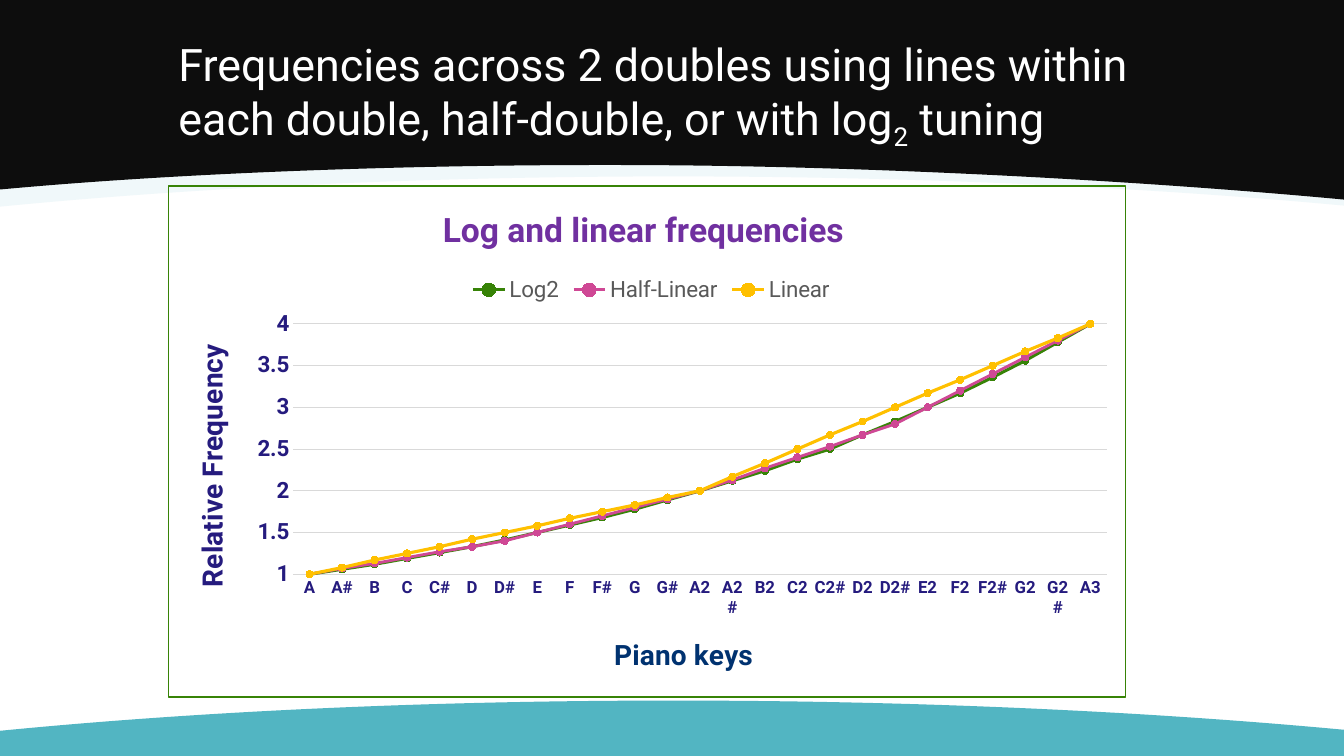
"""Build a slide comparing logarithmic and linear piano tunings in a line chart."""
from dataclasses import dataclass

from lxml.etree import SubElement
from pptx import Presentation
from pptx.chart.data import CategoryChartData
from pptx.dml.color import RGBColor
from pptx.enum.chart import XL_CHART_TYPE, XL_LEGEND_POSITION, XL_MARKER_STYLE, XL_TICK_MARK
from pptx.enum.text import MSO_ANCHOR, MSO_AUTO_SIZE, PP_ALIGN
from pptx.oxml import parse_xml
from pptx.oxml.ns import nsdecls, qn
from pptx.util import Inches, Pt


@dataclass(frozen=True)
class Theme:
    """Colours, font and type sizes of the slide."""
    font: str = "Roboto"
    white: str = "FFFFFF"
    black: str = "0D0D0D"
    mist: str = "EAF6F8"
    teal: str = "52B5C2"
    grid: str = "D9D9D9"
    legend: str = "595959"
    purple: str = "7030A0"
    indigo: str = "251B7E"
    navy: str = "003270"
    green: str = "378307"
    lime: str = "49AF0A"
    pink: str = "CF4895"
    amber: str = "FFC000"
    heading: int = 32
    chart_title: int = 24
    axis_title: int = 20
    label: int = 16
    key_label: int = 12


THEME = Theme()
HEADING = [
    ("Frequencies across 2 doubles using lines within each double, half-double, or with log", 0),
    ("2", -25000),
    (" tuning", 0),
]
CHART_TITLE = "Log and linear frequencies"
KEYS_TITLE = "Piano keys"
FREQUENCY_TITLE = "Relative Frequency"
NOTES = ["A", "A#", "B", "C", "C#", "D", "D#", "E", "F", "F#", "G", "G#"]
KEYS = NOTES + [f"{note[0]}2{note[1:]}" for note in NOTES] + ["A3"]
SERIES = [
    ("Log2", THEME.green, THEME.lime, 2.25,
     [1, 1.06, 1.12, 1.19, 1.26, 1.33, 1.41, 1.5, 1.59, 1.68, 1.78, 1.89, 2,
      2.12, 2.24, 2.38, 2.5, 2.67, 2.83, 3, 3.17, 3.36, 3.56, 3.78, 4]),
    ("Half-Linear", THEME.pink, THEME.pink, 2,
     [1, 1.07, 1.13, 1.2, 1.27, 1.33, 1.4, 1.5, 1.6, 1.7, 1.8, 1.9, 2,
      2.13, 2.27, 2.4, 2.53, 2.67, 2.8, 3, 3.2, 3.4, 3.6, 3.8, 4]),
    ("Linear", THEME.amber, THEME.amber, 2.25,
     [1, 1.08, 1.17, 1.25, 1.33, 1.42, 1.5, 1.58, 1.67, 1.75, 1.83, 1.92, 2,
      2.17, 2.33, 2.5, 2.67, 2.83, 3, 3.17, 3.33, 3.5, 3.67, 3.83, 4]),
]
WIDTH, HEIGHT = 13.33, 7.5
BANDS = [
    (THEME.mist, 70, 0, (WIDTH, 2.04),
     [(11.4, 1.86), (9.12, 1.75), (6.68, 1.75), (4.23, 1.75), (1.94, 1.86), (0, 2.05)]),
    (THEME.black, 100, 0, (WIDTH, 1.98),
     [(11.4, 1.8), (8.89, 1.66), (6.68, 1.64), (4.45, 1.62), (1.94, 1.7), (0, 1.88)]),
    (THEME.teal, 100, HEIGHT, (WIDTH, 7.24),
     [(11.4, 7.06), (9.12, 6.95), (6.68, 6.95), (4.23, 6.95), (1.94, 7.06), (0, 7.25)]),
]


def color(value):
    return RGBColor.from_string(value)


def style_font(font, size, fill, bold=False):
    font.name, font.size, font.bold = THEME.font, Pt(size), bold
    font.color.rgb = color(fill)


def style_line(line, fill, width):
    line.color.rgb = color(fill)
    line.width = Pt(width)


def bend_segments(segments):
    for first in range(0, len(segments), 3):
        group = segments[first:first + 3]
        curve = parse_xml(f"<a:cubicBezTo {nsdecls('a')}/>")
        group[0].addprevious(curve)
        for segment in group:
            curve.append(segment[0])
            segment.getparent().remove(segment)


def add_band(slide, fill, opacity, edge, start, curve):
    builder = slide.shapes.build_freeform(0, Inches(edge))
    outline = [(WIDTH, edge), start, *curve]
    builder.add_line_segments([(Inches(x), Inches(y)) for x, y in outline], close=True)
    band = builder.convert_to_shape()
    bend_segments(list(band._element.iter(qn("a:lnTo")))[-len(curve):])
    band.shadow.inherit = False
    band.fill.solid()
    band.fill.fore_color.rgb = color(fill)
    band.line.fill.background()
    if opacity < 100:
        solid_color = band._element.spPr.find(qn("a:solidFill"))[0]
        SubElement(solid_color, qn("a:alpha"), val=str(opacity * 1000))


def place_heading(slide):
    title = slide.shapes.title
    slide.shapes._spTree.append(title._element)
    title.left, title.top, title.width, title.height = map(Inches, (1.67, 0.3, 10, 1.2))
    frame = title.text_frame
    frame.word_wrap, frame.auto_size = True, MSO_AUTO_SIZE.NONE
    frame.vertical_anchor = MSO_ANCHOR.BOTTOM
    paragraph = frame.paragraphs[0]
    paragraph.alignment, paragraph.line_spacing = PP_ALIGN.LEFT, 0.9
    style_font(paragraph.font, THEME.heading, THEME.white)
    for text, baseline in HEADING:
        run = paragraph.add_run()
        run.text = text
        if baseline:
            run.font._element.set("baseline", str(baseline))


def set_layout(element, index, target="", **fractions):
    previous = element.find(qn("c:layout"))
    if previous is not None:
        element.remove(previous)
    layout = parse_xml(f"<c:layout {nsdecls('c')}><c:manualLayout/></c:layout>")
    if target:
        SubElement(layout[0], qn("c:layoutTarget"), val=target)
    for name in ("x", "y"):
        SubElement(layout[0], qn(f"c:{name}Mode"), val="edge")
    for name, value in fractions.items():
        SubElement(layout[0], qn(f"c:{name}"), val=str(value))
    element.insert(index, layout)


def write_title(title, text, size, fill, x, y):
    paragraph = title.text_frame.paragraphs[0]
    paragraph.text = text
    style_font(paragraph.font, size, fill, True)
    set_layout(title._element, 1, x=x, y=y)


def add_frequency_chart(slide):
    data = CategoryChartData()
    data.categories = KEYS
    for name, *_, values in SERIES:
        data.add_series(name, values)
    box = map(Inches, (1.67, 1.84, 9.5, 5.08))
    chart = slide.shapes.add_chart(XL_CHART_TYPE.LINE_MARKERS, *box, data).chart
    chart.font.name, chart.font.size = THEME.font, Pt(10)
    chart.has_title = chart.has_legend = True
    write_title(chart.chart_title, CHART_TITLE, THEME.chart_title, THEME.purple, 0.28, 0.03)
    chart.legend.position = XL_LEGEND_POSITION.TOP
    chart.legend.include_in_layout = False
    set_layout(chart.legend._element, 1, x=0.31, y=0.17)
    style_font(chart.legend.font, THEME.label, THEME.legend)

    keys, frequency = chart.category_axis, chart.value_axis
    for axis, size in ((keys, THEME.key_label), (frequency, THEME.label)):
        axis.major_tick_mark = axis.minor_tick_mark = XL_TICK_MARK.NONE
        style_font(axis.tick_labels.font, size, THEME.indigo, True)
    write_title(keys.axis_title, KEYS_TITLE, THEME.axis_title, THEME.navy, 0.46, 0.87)
    write_title(frequency.axis_title, FREQUENCY_TITLE, THEME.axis_title, THEME.indigo, 0.02, 0.3)
    rotation = frequency.axis_title.text_frame._txBody.bodyPr
    rotation.set("rot", "-5400000")
    rotation.set("vert", "horz")
    style_line(keys.format.line, THEME.grid, 0.75)
    style_line(frequency.major_gridlines.format.line, THEME.grid, 0.75)
    frequency.format.line.fill.background()
    frequency.minimum_scale, frequency.maximum_scale, frequency.major_unit = 1, 4, 0.5
    frequency.tick_labels.number_format = "General"
    frequency.tick_labels.number_format_is_linked = False

    chart.plots[0].vary_by_categories = False
    for series, (_, fill, marker_fill, width, _) in zip(chart.plots[0].series, SERIES):
        series.smooth = False
        style_line(series.format.line, fill, width)
        series.marker.style, series.marker.size = XL_MARKER_STYLE.CIRCLE, 5
        series.marker.format.fill.solid()
        series.marker.format.fill.fore_color.rgb = color(marker_fill)
        style_line(series.marker.format.line, fill, 0.75)

    space = chart._chartSpace
    set_layout(space.chart.plotArea, 0, "inner", x=0.13, y=0.27, w=0.85, h=0.49)
    space.find(qn("c:txPr")).addprevious(parse_xml(
        f'<c:spPr {nsdecls("c", "a")}><a:noFill/><a:ln w="{Pt(0.75)}"><a:solidFill>'
        f'<a:srgbClr val="{THEME.green}"/></a:solidFill></a:ln></c:spPr>'))


def main():
    presentation = Presentation()
    presentation.slide_width, presentation.slide_height = Inches(WIDTH), Inches(HEIGHT)
    slide = presentation.slides.add_slide(presentation.slide_layouts[5])
    for band in BANDS:
        add_band(slide, *band)
    place_heading(slide)
    add_frequency_chart(slide)
    presentation.save("out.pptx")


if __name__ == "__main__":
    main()
